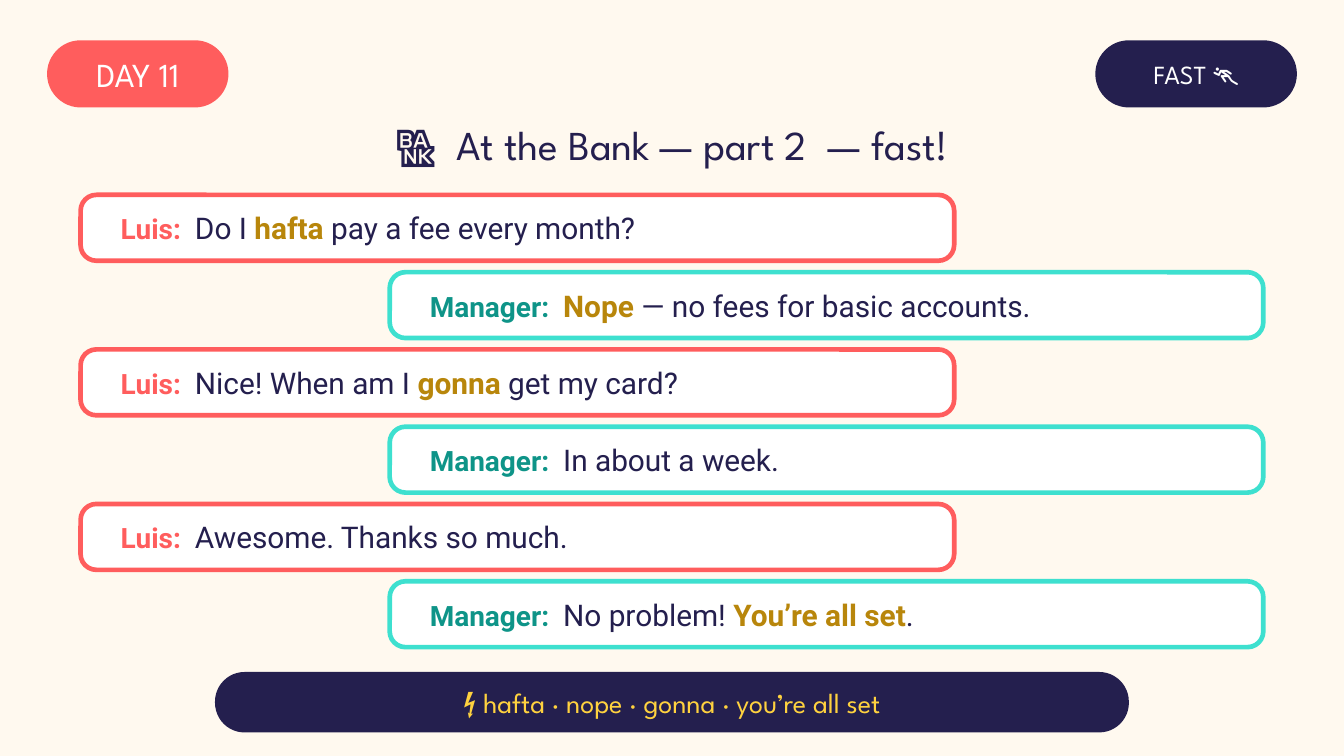
from dataclasses import dataclass

from pptx import Presentation
from pptx.dml.color import RGBColor
from pptx.enum.shapes import MSO_SHAPE as Shape
from pptx.enum.text import MSO_ANCHOR as Anchor, PP_ALIGN as Align
from pptx.util import Inches, Pt

COLUMNS, ROWS = 200, 225
HEADING_FONT, BODY_FONT = "League Spartan", "Roboto"
CREAM, WHITE, NAVY = "FFF9EF", "FFFFFF", "241F4E"
CORAL, TURQUOISE, TEAL = "FF5D5D", "3EE0CF", "0E9488"
GOLD, YELLOW = "B8860B", "FFD23F"


@dataclass(frozen=True)
class Area:
    """A rectangle in grid columns and rows."""
    column: float
    row: float
    columns: float
    rows: float

    def inset(self, columns: float) -> "Area":
        return Area(self.column + columns, self.row, self.columns - 2 * columns, self.rows)


@dataclass(frozen=True)
class Run:
    text: str
    color: str = NAVY
    size: float = 16
    bold: bool = False
    font: str = BODY_FONT
    tracking: float = 0


@dataclass(frozen=True)
class Speaker:
    name: str
    column: float
    border: str
    name_color: str


@dataclass(frozen=True)
class Pill:
    area: Area
    text: str
    size: float
    fill: str
    color: str = WHITE
    rounding: float = 0.5


def rgb(color: str) -> RGBColor:
    return RGBColor.from_string(color)


def place(area: Area) -> tuple[int, int, int, int]:
    width, height = deck.slide_width / COLUMNS, deck.slide_height / ROWS
    return (round(area.column * width), round(area.row * height),
            round(area.columns * width), round(area.rows * height))


def add_panel(area: Area, fill: str, rounding: float, border: str | None = None) -> None:
    panel = page.shapes.add_shape(Shape.ROUNDED_RECTANGLE, *place(area))
    panel.adjustments[0] = rounding
    panel.shadow.inherit = False
    panel.fill.solid()
    panel.fill.fore_color.rgb = rgb(fill)
    if border:
        panel.line.color.rgb = rgb(border)
        panel.line.width = Pt(2.5)
    else:
        panel.line.fill.background()


def add_text(area: Area, runs: list[Run], align: Align = Align.CENTER, padded: bool = True) -> None:
    frame = page.shapes.add_textbox(*place(area)).text_frame
    frame.word_wrap = True
    frame.vertical_anchor = Anchor.MIDDLE
    if not padded:
        frame.margin_left = frame.margin_right = frame.margin_top = frame.margin_bottom = 0
    para = frame.paragraphs[0]
    para.alignment = align
    for run in runs:
        span = para.add_run()
        span.text = run.text
        span.font.name = run.font
        span.font.size = Pt(run.size)
        span.font.bold = run.bold
        span.font.color.rgb = rgb(run.color)
        if run.tracking:
            span.font._element.set("spc", str(round(run.tracking * 100)))


def add_pill(pill: Pill) -> None:
    add_panel(pill.area, pill.fill, pill.rounding)
    add_text(pill.area, [Run(pill.text, pill.color, pill.size, font=HEADING_FONT)], padded=False)


def add_bubble(index: int, speaker: Speaker, words: list[Run]) -> None:
    area = Area(speaker.column, 58 + 23 * index, 130, 19.6)
    add_panel(area, WHITE, 0.24, speaker.border)
    name = Run(f"{speaker.name}:", speaker.name_color, 15, bold=True)
    gap = Run(" ", speaker.name_color, 15, bold=True, tracking=3.7)
    add_text(area.inset(4), [name, gap, *words], Align.LEFT)


def slang(text: str) -> Run:
    return Run(text, GOLD, bold=True)


def heading(text: str, tracking: float = 0) -> Run:
    return Run(text, size=22, font=HEADING_FONT, tracking=tracking)


LUIS = Speaker("Luis", 12, CORAL, CORAL)
MANAGER = Speaker("Manager", 58, TURQUOISE, TEAL)
DIALOGUE = [
    (LUIS, [Run("Do I "), slang("hafta"), Run(" pay a fee every month?")]),
    (MANAGER, [slang("Nope"), Run(" — no fees for basic accounts.")]),
    (LUIS, [Run("Nice! When am I "), slang("gonna"), Run(" get my card?")]),
    (MANAGER, [Run("In about a week.")]),
    (LUIS, [Run("Awesome. Thanks so much.")]),
    (MANAGER, [Run("No problem! "), slang("You’re all set"), Run(".")]),
]
DAY = Pill(Area(7, 12, 27, 20), "DAY 11", 18, CORAL)
SPEED = Pill(Area(163, 12, 30, 20), "FAST 🏃", 14, NAVY)
SUMMARY = Pill(Area(32, 200, 136, 18), "⚡ hafta · nope · gonna · you’re all set",
               15, NAVY, YELLOW, 0.49)

deck = Presentation()
deck.slide_width = Inches(10)
deck.slide_height = deck.slide_width * 9 // 16
page = deck.slides.add_slide(deck.slide_layouts[6])
page.background.fill.solid()
page.background.fill.fore_color.rgb = rgb(CREAM)

add_pill(DAY)
add_pill(SPEED)
wide_gap = heading(" ", tracking=5.5)
add_text(Area(0, 32.8, COLUMNS, 20),
         [heading("🏦"), wide_gap, heading("At the Bank — part 2"), wide_gap, heading("— fast!")])
for index, (speaker, words) in enumerate(DIALOGUE):
    add_bubble(index, speaker, words)
add_pill(SUMMARY)

deck.save("out.pptx")
